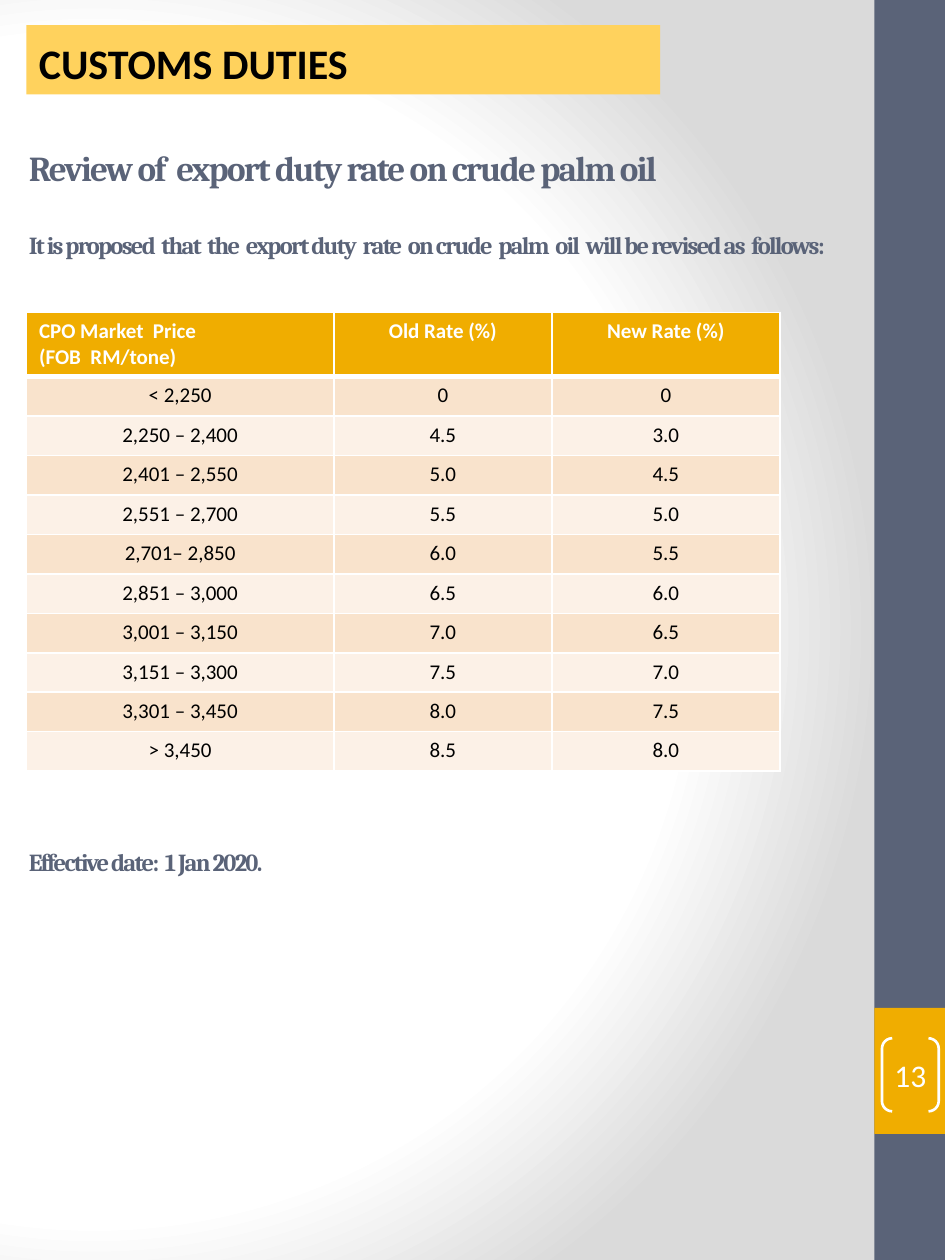
import pptx
import pptx.dml.color
import pptx.enum.shapes
import pptx.enum.text
import pptx.oxml
import pptx.oxml.ns
import pptx.util

Inches = pptx.util.Inches
RGBColor = pptx.dml.color.RGBColor
ALIGN = pptx.enum.text.PP_ALIGN
ANCHOR = pptx.enum.text.MSO_ANCHOR
SHAPE = pptx.enum.shapes.MSO_SHAPE

SLATE = RGBColor(0x5A, 0x63, 0x78)
AMBER = RGBColor(0xF0, 0xAD, 0x00)
YELLOW = RGBColor(0xFF, 0xD2, 0x5D)
PEACH = RGBColor(0xF9, 0xE3, 0xCC)
CREAM = RGBColor(0xFC, 0xF1, 0xE7)
WHITE = RGBColor(0xFF, 0xFF, 0xFF)
GRAY = RGBColor(0xDA, 0xDA, 0xDA)
BLACK = RGBColor(0x00, 0x00, 0x00)

HEADINGS = ("CPO Market  Price\n(FOB  RM/tone)", "Old Rate (%)", "New Rate (%)")
RATES = (
    ("< 2,250", "0", "0"),
    ("2,250 – 2,400", "4.5", "3.0"),
    ("2,401 – 2,550", "5.0", "4.5"),
    ("2,551 – 2,700", "5.5", "5.0"),
    ("2,701– 2,850", "6.0", "5.5"),
    ("2,851 – 3,000", "6.5", "6.0"),
    ("3,001 – 3,150", "7.0", "6.5"),
    ("3,151 – 3,300", "7.5", "7.0"),
    ("3,301 – 3,450", "8.0", "7.5"),
    ("> 3,450", "8.5", "8.0"),
)
STATEMENTS = (
    (1.33, 20, "Review of  export duty rate on crude palm oil"),
    (1.94, 14, "It is proposed  that  the  export duty  rate  on crude  palm  oil  "
               "will be revised as  follows:"),
    (6.84, 14, "Effective date:  1 Jan 2020."),
)
COLUMN_WIDTHS = (2.44, 1.73, 1.81)
TABLE_HEIGHT = 3.64
HEADER_HEIGHT = 0.51


def paint_background(slide):
    """Fill the slide with a white to gray circular gradient."""
    stops = "".join(f'<a:gs pos="{pos}"><a:srgbClr val="{color}"/></a:gs>'
                    for pos, color in ((0, WHITE), (75000, WHITE), (100000, GRAY)))
    background = pptx.oxml.parse_xml(
        f'<p:bg {pptx.oxml.ns.nsdecls("p", "a")}><p:bgPr><a:gradFill rotWithShape="1">'
        f'<a:gsLst>{stops}</a:gsLst><a:path path="circle">'
        '<a:fillToRect l="20000" t="50000" r="100000" b="50000"/></a:path>'
        '</a:gradFill><a:effectLst/></p:bgPr></p:bg>')
    slide.element.cSld.insert(0, background)


def style_text(frame, font, size, color, bold=False, align=ALIGN.LEFT):
    """Apply one style to all the text in a frame."""
    for paragraph in frame.paragraphs:
        paragraph.alignment = align
        for run in paragraph.runs:
            run.font.name = font
            run.font.size = pptx.util.Pt(size)
            run.font.bold = bold
            run.font.color.rgb = color


def add_block(slide, left, top, width, height, color):
    """Add a plain filled rectangle."""
    block = slide.shapes.add_shape(SHAPE.RECTANGLE, Inches(left), Inches(top),
                                   Inches(width), Inches(height))
    block.shadow.inherit = False
    block.fill.solid()
    block.fill.fore_color.rgb = color
    block.line.fill.background()
    return block


def add_banner(slide, title):
    """Add the yellow title banner."""
    frame = add_block(slide, 0.21, 0.2, 5.03, 0.55, YELLOW).text_frame
    frame.text = title
    frame.vertical_anchor = ANCHOR.BOTTOM
    style_text(frame, "Calibri", 24, BLACK, bold=True)


def add_statement(slide, middle, size, statement):
    """Add a tightly spaced serif line centred on a height."""
    height = 0.5
    box = slide.shapes.add_textbox(Inches(0.13), Inches(middle - height / 2),
                                   Inches(6.61), Inches(height))
    frame = box.text_frame
    frame.word_wrap = True
    frame.vertical_anchor = ANCHOR.MIDDLE
    frame.text = statement
    style_text(frame, "Cambria", size, SLATE, bold=True)
    for run in frame.paragraphs[0].runs:
        run.font._element.set("spc", "-100")


def set_borders(cell, bottom_width):
    """Draw white borders around a table cell."""
    widths = {"lnL": 1, "lnR": 1, "lnT": 1, "lnB": bottom_width}
    properties = cell._tc.get_or_add_tcPr()
    for position, (edge, width) in enumerate(widths.items()):
        properties.insert(position, pptx.oxml.parse_xml(
            f'<a:{edge} {pptx.oxml.ns.nsdecls("a")} w="{pptx.util.Pt(width)}">'
            f'<a:solidFill><a:srgbClr val="{WHITE}"/></a:solidFill></a:{edge}>'))


def add_rate_table(slide):
    """Add the table of old and new duty rates."""
    table = slide.shapes.add_table(
        len(RATES) + 1, len(HEADINGS), Inches(0.21), Inches(2.48),
        Inches(sum(COLUMN_WIDTHS)), Inches(TABLE_HEIGHT)).table
    for column, width in zip(table.columns, COLUMN_WIDTHS):
        column.width = Inches(width)
    for i, entries in enumerate((HEADINGS, *RATES)):
        header = i == 0
        body_height = (TABLE_HEIGHT - HEADER_HEIGHT) / len(RATES)
        table.rows[i].height = Inches(HEADER_HEIGHT if header else body_height)
        for j, entry in enumerate(entries):
            cell = table.cell(i, j)
            cell.text_frame.text = entry
            style_text(cell.text_frame, "Calibri", 12, WHITE if header else BLACK,
                       bold=header, align=ALIGN.LEFT if header and j == 0 else ALIGN.CENTER)
            cell.fill.solid()
            cell.fill.fore_color.rgb = AMBER if header else PEACH if i % 2 else CREAM
            set_borders(cell, 3 if header else 1)


def add_page_number(slide, number):
    """Add the page number between white brackets."""
    brackets = slide.shapes.add_shape(SHAPE.DOUBLE_BRACKET, Inches(7), Inches(8.24),
                                      Inches(0.45), Inches(0.58))
    brackets.adjustments[0] = 0.18
    brackets.shadow.inherit = False
    brackets.fill.background()
    brackets.line.color.rgb = WHITE
    brackets.line.width = pptx.util.Pt(1.5)
    frame = brackets.text_frame
    frame.margin_left = frame.margin_right = frame.margin_top = frame.margin_bottom = 0
    frame.word_wrap = False
    frame.vertical_anchor = ANCHOR.MIDDLE
    frame.text = number
    style_text(frame, "Calibri", 18, WHITE, align=ALIGN.CENTER)


def main():
    """Build the customs duties slide."""
    presentation = pptx.Presentation()
    presentation.slide_width = Inches(7.5)
    presentation.slide_height = Inches(10)
    slide = presentation.slides.add_slide(presentation.slide_layouts[6])
    paint_background(slide)
    add_block(slide, 6.94, 0, 0.56, 10, SLATE)
    add_block(slide, 6.94, 8, 0.56, 1, AMBER)
    for middle, size, statement in STATEMENTS:
        add_statement(slide, middle, size, statement)
    add_banner(slide, "CUSTOMS DUTIES")
    add_rate_table(slide)
    add_page_number(slide, "13")
    presentation.save("out.pptx")


if __name__ == "__main__":
    main()
